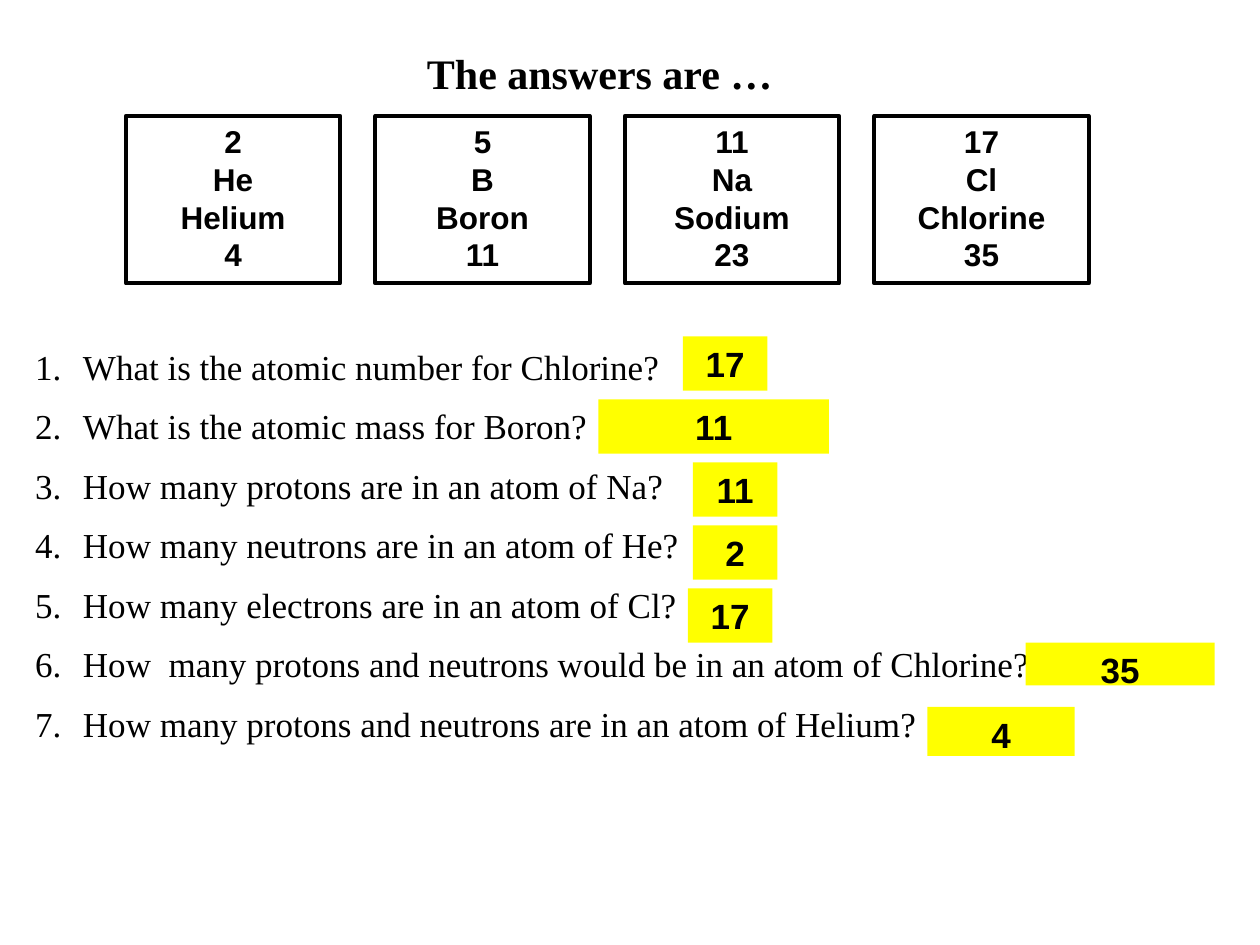
from pptx import Presentation
from pptx.dml.color import RGBColor
from pptx.enum.shapes import MSO_SHAPE
from pptx.enum.text import MSO_ANCHOR, PP_ALIGN
from pptx.oxml.ns import qn
from pptx.util import Inches, Pt
from lxml.etree import SubElement

COLORS = {"ink": "000000", "mark": "FFFF00"}
FORMATS = {
    "title": {"name": "Times New Roman", "size": Pt(24), "bold": True},
    "card": {"name": "Arial", "size": Pt(18), "bold": True},
    "question": {"name": "Times New Roman", "size": Pt(20), "bold": False},
    "answer": {"name": "Arial", "size": Pt(20), "bold": True},
}


def style(para, kind, align):
    para.alignment = align
    for key, value in FORMATS[kind].items():
        setattr(para.font, key, value)
    para.font.color.rgb = RGBColor.from_string(COLORS["ink"])


def add_rect(place, text, kind):
    """Add a plain rectangle with centred text, one paragraph a line."""
    shape = slide.shapes.add_shape(MSO_SHAPE.RECTANGLE, *map(Inches, place))
    shape.shadow.inherit = False
    frame = shape.text_frame
    frame.word_wrap = True
    frame.vertical_anchor = MSO_ANCHOR.TOP
    frame.text = text
    for para in frame.paragraphs:
        style(para, kind, PP_ALIGN.CENTER)
    return shape


deck = Presentation()
deck.slide_width, deck.slide_height = Inches(10), Inches(7.5)
slide = deck.slides.add_slide(deck.slide_layouts[6])

# Element cards
cards = ["2\nHe\nHelium\n4", "5\nB\nBoron\n11",
         "11\nNa\nSodium\n23", "17\nCl\nChlorine\n35"]
for col, text in enumerate(cards):
    card = add_rect((1 + col * 1.98, 0.92, 1.7, 1.33), text, "card")
    card.fill.background()
    card.line.color.rgb = RGBColor.from_string(COLORS["ink"])
    card.line.width = Pt(2.25)

# Title
title = slide.shapes.add_textbox(*map(Inches, (0.75, 0.33, 8.02, 0.5)))
title.text_frame.word_wrap = True
title.text_frame.text = "The answers are …"
style(title.text_frame.paragraphs[0], "title", PP_ALIGN.CENTER)

# Numbered questions
questions = [
    "What is the atomic number for Chlorine?",
    "What is the atomic mass for Boron?",
    "How many protons are in an atom of Na?",
    "How many neutrons are in an atom of He?",
    "How many electrons are in an atom of Cl?",
    "How  many protons and neutrons would be in an atom of Chlorine?",
    "How many protons and neutrons are in an atom of Helium?",
]
box = slide.shapes.add_textbox(*map(Inches, (0.18, 2.69, 9.75, 3.93)))
box.text_frame.word_wrap = True
box.text_frame.text = "\n".join(questions)
for row, para in enumerate(box.text_frame.paragraphs):
    props = para._p.get_or_add_pPr()
    props.set("marL", str(Inches(0.38)))
    props.set("indent", str(Inches(-0.38)))
    SubElement(props, qn("a:buFont"), typeface="+mj-lt")
    SubElement(props, qn("a:buAutoNum"), type="arabicPeriod")
    style(para, "question", PP_ALIGN.LEFT)
    if row:
        para.space_before = Pt(10)

# Highlighted answers: text, left, top, width, height
answers = [
    ("17", 5.42, 2.67, 0.67, 0.43),
    ("11", 4.75, 3.17, 1.83, 0.43),
    ("11", 5.5, 3.67, 0.67, 0.43),
    ("2", 5.5, 4.17, 0.67, 0.43),
    ("17", 5.46, 4.67, 0.67, 0.43),
    ("35", 8.14, 5.1, 1.5, 0.34),
    ("4", 7.36, 5.61, 1.17, 0.39),
]
for text, *place in answers:
    mark = add_rect(place, text, "answer")
    mark.fill.solid()
    mark.fill.fore_color.rgb = RGBColor.from_string(COLORS["mark"])
    mark.line.fill.background()

deck.save("out.pptx")
